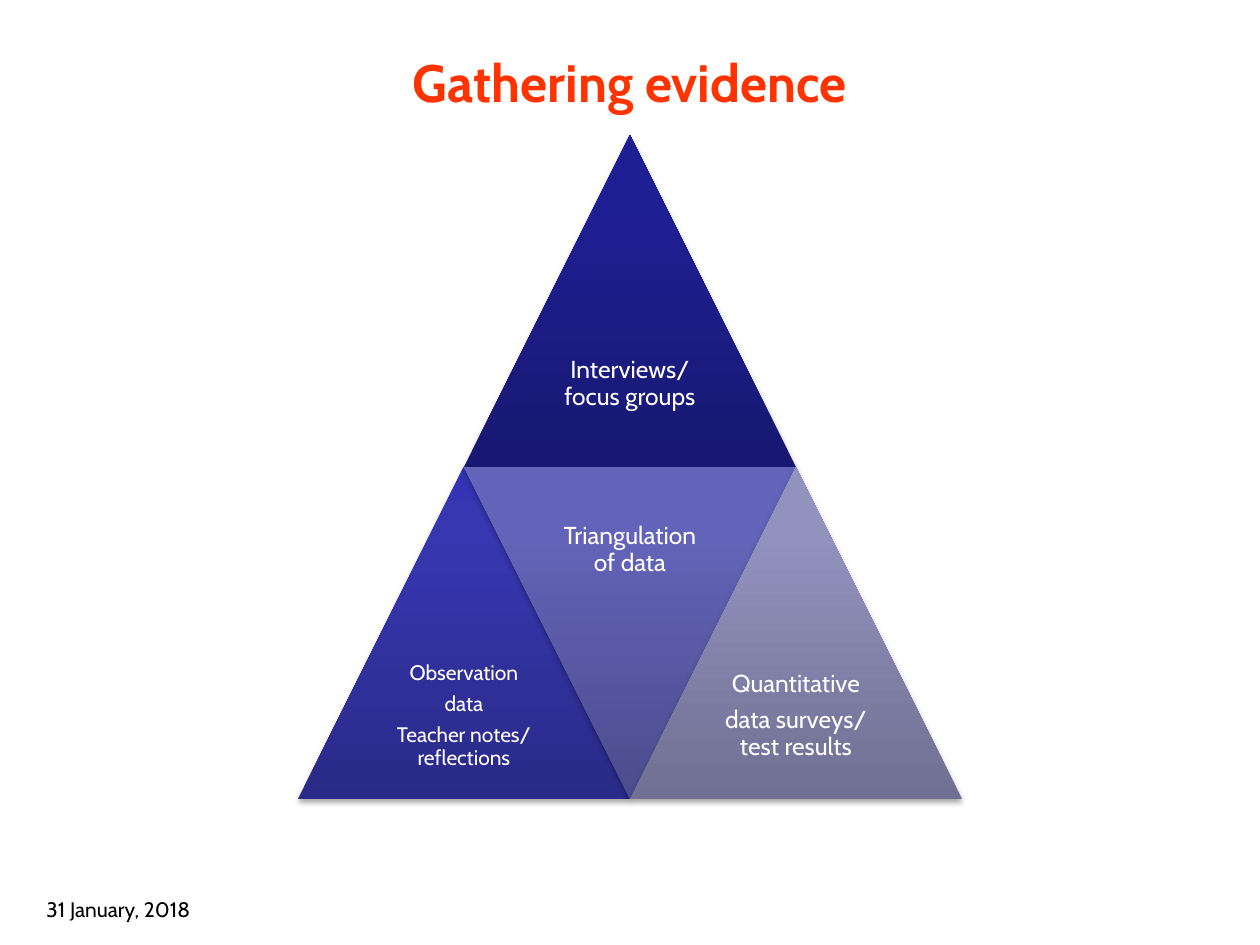
import pptx
import pptx.util
import pptx.dml.color
import pptx.enum.shapes
import pptx.enum.text
import pptx.oxml
import pptx.oxml.ns

PX = 914400 // 126
FONT = "Cabin"
COLOURS = {"title": "FF3300", "date": "000000", "label": "FFFFFF", "shadow": "000000"}
GRADIENTS = {
    "interviews": ("181872", "1F1F94", "1D1D97"),
    "observation": ("2A2A88", "3737B1", "3434B4"),
    "triangulation": ("4C4C8E", "6363B9", "6262BB"),
    "quantitative": ("707093", "9292BF", "9191C0"),
}
STOPS = (0, 80, 100)
SIDE, HALF = 332, 166
LEFT, TOP = 298, 135

# name, column in half sides, row, turned, text size, paragraphs
TRIANGLES = [
    ("interviews", 1, 0, False, 14, ["Interviews/ focus groups"]),
    ("observation", 0, 1, False, 12, ["Observation", "data", "Teacher notes/ reflections"]),
    ("triangulation", 1, 1, True, 14, ["Triangulation of data"]),
    ("quantitative", 2, 1, False, 14, ["Quantitative", "data surveys/ test results"]),
]


def px(*lengths):
    return [pptx.util.Emu(length * PX) for length in lengths]


def add_span(para, text, size, colour, bold=False):
    span = para.add_run()
    span.text = text
    span.font.name = FONT
    span.font.size = pptx.util.Pt(size)
    span.font.bold = bold
    span.font.color.rgb = pptx.dml.color.RGBColor.from_string(COLOURS[colour])


def add_title(page, text):
    box = page.shapes.title
    box.left, box.top, box.width, box.height = px(63, 38, 1134, 87)
    frame = box.text_frame
    frame.auto_size = pptx.enum.text.MSO_AUTO_SIZE.NONE
    frame.vertical_anchor = pptx.enum.text.MSO_ANCHOR.MIDDLE
    para = frame.paragraphs[0]
    para.alignment = pptx.enum.text.PP_ALIGN.CENTER
    add_span(para, text, 30, "title", bold=True)


def add_date(page, text):
    box = page.shapes.add_textbox(*px(34, 890, 372, 38))
    box.text_frame.word_wrap = True
    add_span(box.text_frame.paragraphs[0], text, 12, "date")


def add_triangle(group, left, top, turned, colours):
    shape = group.shapes.add_shape(
        pptx.enum.shapes.MSO_SHAPE.ISOSCELES_TRIANGLE, *px(left, top, SIDE, SIDE))
    shape.rotation = 180 if turned else 0
    shape.line.fill.background()
    namespace = pptx.oxml.ns.nsdecls("a")
    stops = "".join(
        f'<a:gs pos="{stop * 1000}"><a:srgbClr val="{colour}"/></a:gs>'
        for stop, colour in zip(STOPS, colours))
    gradient = pptx.oxml.parse_xml(
        f'<a:gradFill {namespace} rotWithShape="0"><a:gsLst>{stops}</a:gsLst>'
        '<a:lin ang="16200000" scaled="0"/></a:gradFill>')
    effects = pptx.oxml.parse_xml(
        f'<a:effectLst {namespace}><a:outerShdw blurRad="40000" dist="23000"'
        f' dir="5400000" rotWithShape="0"><a:srgbClr val="{COLOURS["shadow"]}">'
        '<a:alpha val="35000"/></a:srgbClr></a:outerShdw></a:effectLst>')
    # The fill goes before the line, the shadow after it
    outline = shape.line._get_or_add_ln()
    outline.addprevious(gradient)
    outline.addnext(effects)


def add_label(group, left, top, size, texts):
    box = group.shapes.add_textbox(*px(left, top, HALF, HALF))
    frame = box.text_frame
    frame.word_wrap = True
    frame.vertical_anchor = pptx.enum.text.MSO_ANCHOR.MIDDLE
    inset = pptx.util.Pt(size * 0.3)
    frame.margin_left = frame.margin_right = inset
    frame.margin_top = frame.margin_bottom = inset
    for index, text in enumerate(texts):
        para = frame.add_paragraph() if index else frame.paragraphs[0]
        para.alignment = pptx.enum.text.PP_ALIGN.CENTER
        para.line_spacing = 0.9
        para.space_after = pptx.util.Pt(size * 0.4)
        add_span(para, text, size, "label")


def main():
    deck = pptx.Presentation()
    deck.slide_width = pptx.util.Inches(10)
    deck.slide_height = pptx.util.Inches(7.5)
    page = deck.slides.add_slide(deck.slide_layouts[5])
    add_date(page, "31 January, 2018")
    add_title(page, "Gathering evidence")

    # Large triangle made of four small ones
    group = page.shapes.add_group_shape()
    for name, column, row, turned, size, texts in TRIANGLES:
        left, top = LEFT + column * HALF, TOP + row * SIDE
        add_triangle(group, left, top, turned, GRADIENTS[name])
        label_top = top if turned else top + HALF
        add_label(group, left + HALF // 2, label_top, size, texts)

    deck.save("out.pptx")


if __name__ == "__main__":
    main()
